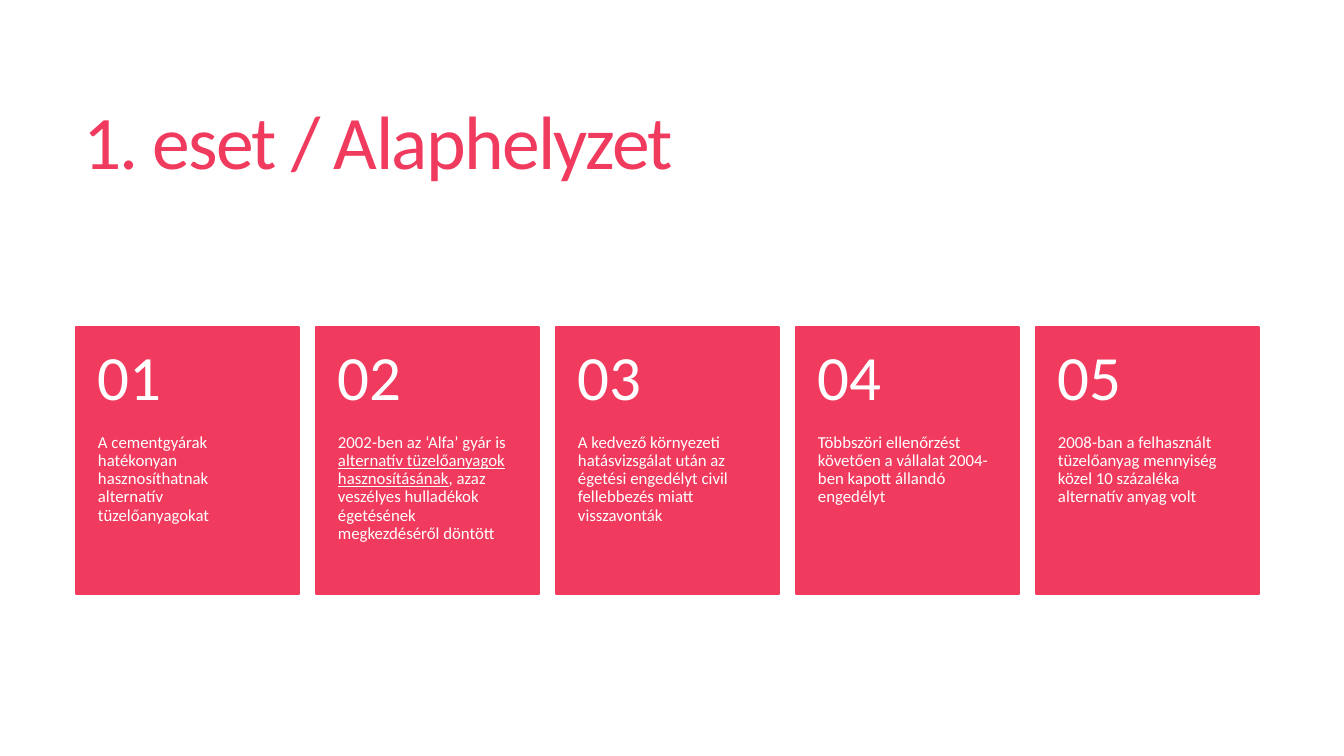
from dataclasses import dataclass

from pptx import Presentation
from pptx.dml.color import RGBColor
from pptx.enum import shapes, text
from pptx.util import Emu, Pt


@dataclass(frozen=True)
class Theme:
    font: str = "Calibri"
    accent: RGBColor = RGBColor(0xF0, 0x3B, 0x5E)
    white: RGBColor = RGBColor(0xFF, 0xFF, 0xFF)
    title: int = 54
    number: int = 45
    body: int = 12


theme = Theme()


def px(n):
    return Emu(round(n * 914400 / 100.8))


def fill_text(sp, runs, size, color, anchor, spacing):
    """Write (text, underlined) runs as one left-aligned paragraph."""
    tf = sp.text_frame
    tf.word_wrap = True
    tf.auto_size = text.MSO_AUTO_SIZE.NONE
    tf.vertical_anchor = anchor
    p = tf.paragraphs[0]
    p.alignment = text.PP_ALIGN.LEFT
    p.line_spacing = spacing
    for words, underlined in runs:
        r = p.add_run()
        r.text = words
        r.font.name = theme.font
        r.font.size = Pt(size)
        r.font.color.rgb = color
        if underlined:
            r.font.underline = True
    return tf


prs = Presentation()
prs.slide_width, prs.slide_height = px(1344), px(756)
s = prs.slides.add_slide(prs.slide_layouts[5])

# Title
title = s.shapes.title
title.left, title.top, title.width, title.height = px(73), px(55), px(1187), px(182)
tf = fill_text(title, [("1. eset / Alaphelyzet", False)], theme.title,
               theme.accent, text.MSO_ANCHOR.MIDDLE, 0.85)
tf.paragraphs[0].runs[0].font._element.set("spc", "-120")

# Numbered cards
cards = [
    [("A cementgyárak hatékonyan hasznosíthatnak alternatív tüzelőanyagokat", False)],
    [("2002-ben az ‘Alfa’ gyár is ", False),
     ("alternatív tüzelőanyagok hasznosításának", True),
     (", azaz veszélyes hulladékok égetésének megkezdéséről döntött", False)],
    [("A kedvező környezeti hatásvizsgálat után az égetési engedélyt civil "
      "fellebbezés miatt visszavonták", False)],
    [("Többszöri ellenőrzést követően a vállalat 2004-ben kapott állandó "
      "engedélyt", False)],
    [("2008-ban a felhasznált tüzelőanyag mennyiség közel 10 százaléka "
      "alternatív anyag volt", False)],
]
LEFT, TOP, WIDTH, HEIGHT, PITCH = 76, 327, 223, 267, 240
NUMBER_H = 107
INSET = 22

for i, body in enumerate(cards):
    x = LEFT + i * PITCH

    # Card background
    card = s.shapes.add_shape(shapes.MSO_SHAPE.RECTANGLE,
                              px(x), px(TOP), px(WIDTH), px(HEIGHT))
    card.shadow.inherit = False
    card.fill.solid()
    card.fill.fore_color.rgb = theme.accent
    card.line.color.rgb = theme.accent
    card.line.width = Pt(1)

    # Number above, description below
    parts = [
        (TOP, NUMBER_H, [(f"{i + 1:02d}", False)], theme.number,
         text.MSO_ANCHOR.MIDDLE, 18, 18),
        (TOP + NUMBER_H, HEIGHT - NUMBER_H, body, theme.body,
         text.MSO_ANCHOR.TOP, 0, 36),
    ]
    for y, height, runs, size, anchor, inset_top, inset_bottom in parts:
        box = s.shapes.add_textbox(px(x), px(y), px(WIDTH), px(height))
        tf = fill_text(box, runs, size, theme.white, anchor, 0.9)
        tf.margin_left = tf.margin_right = px(INSET)
        tf.margin_top, tf.margin_bottom = px(inset_top), px(inset_bottom)

prs.save("out.pptx")
